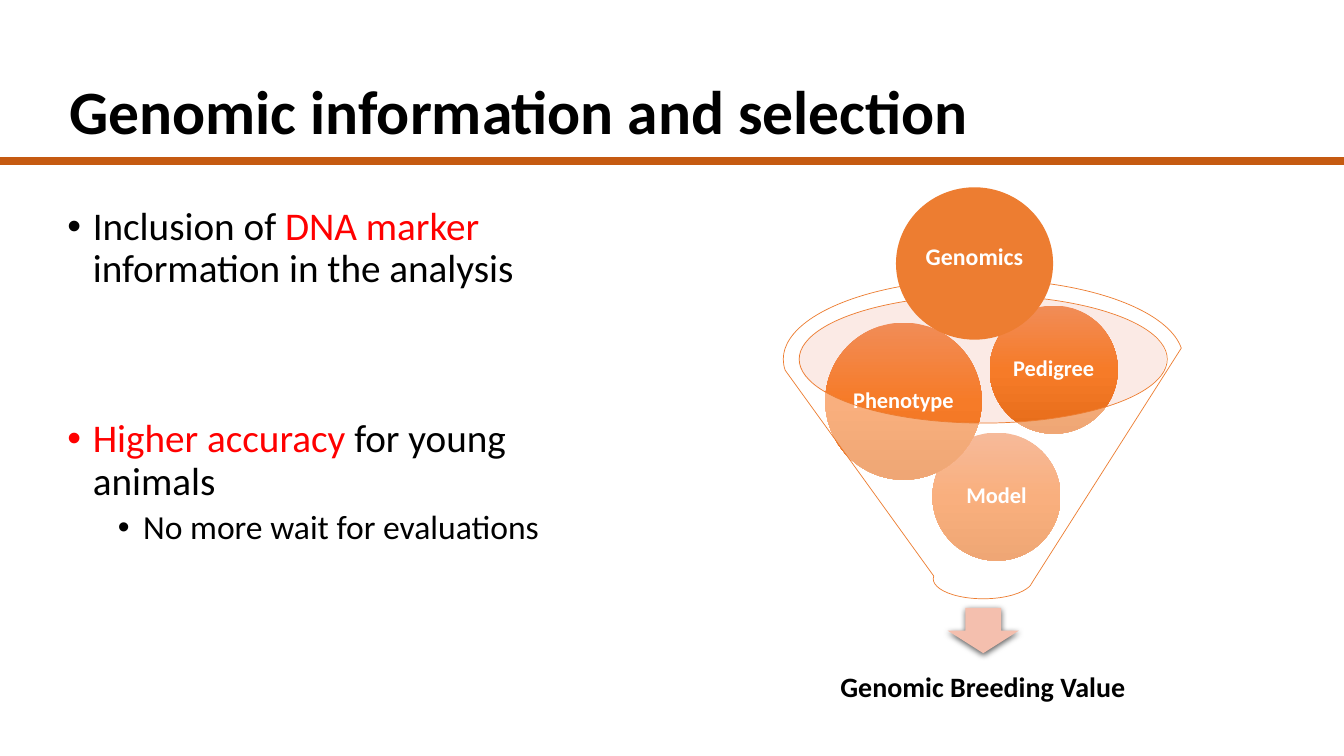
import copy

import pptx
import pptx.dml.color
import pptx.enum.shapes
import pptx.enum.text
import pptx.oxml.ns
import pptx.oxml.xmlchemy
import pptx.util
from lxml import etree
from pptx.util import Cm

SHAPE = pptx.enum.shapes.MSO_SHAPE
ALIGN = pptx.enum.text.PP_ALIGN
ANCHOR = pptx.enum.text.MSO_ANCHOR
qn = pptx.oxml.ns.qn

ORANGE = "ED7D31"
RED = "FF0000"
BALL_GRADIENT = ((0, "F18C57"), (0.5, "F67B28"), (1, "E56C19"))
BALLS = (
    ("Model", 23.5, 10.9, 3.23, 3.23),
    ("Phenotype", 20.8, 8.13, 3.94, 3.96),
    ("Pedigree", 24.94, 7.7, 3.23, 3.23),
)


def rgb(value):
    return pptx.dml.color.RGBColor.from_string(value)


def add_run(p, text, size=28, color="000000", bold=False):
    r = p.add_run()
    r.text = text
    r.font.name = "Calibri"
    r.font.size = pptx.util.Pt(size)
    r.font.bold = bold
    r.font.color.rgb = rgb(color)


def set_frame(tf, inset=(0.25, 0.13, 0.25, 0.13), anchor=ANCHOR.MIDDLE):
    """Fix the insets (left, top, right, bottom, in cm), anchor and wrapping."""
    tf.word_wrap = True
    tf.auto_size = pptx.enum.text.MSO_AUTO_SIZE.NONE
    tf.vertical_anchor = anchor
    tf.margin_left, tf.margin_top, tf.margin_right, tf.margin_bottom = map(Cm, inset)


def add_line_of_text(tf, text, align=ALIGN.CENTER, **font):
    p = tf.paragraphs[0]
    p.alignment = align
    p.line_spacing = 0.9
    add_run(p, text, **font)


def add_bullet(p, runs, left, before, size=28):
    """Bulleted paragraph; runs are (text, colour) pairs, left is in cm."""
    p.line_spacing = 0.9
    p.space_before = pptx.util.Pt(before)
    pPr = p._p.get_or_add_pPr()
    pPr.set("marL", str(Cm(left)))
    pPr.set("indent", str(-Cm(0.64)))
    etree.SubElement(pPr, qn("a:buFont")).set("typeface", "Arial")
    etree.SubElement(pPr, qn("a:buChar")).set("char", "•")
    for text, color in runs:
        add_run(p, text, size=size, color=color)


def set_alpha(color_parent, percent):
    color = next(color_parent.iter(qn("a:srgbClr")))
    etree.SubElement(color, qn("a:alpha")).set("val", str(percent * 1000))


def add_shape(s, kind, box, fill=None, alpha=None, line=None):
    sp = s.shapes.add_shape(kind, *map(Cm, box))
    sp.shadow.inherit = False
    if fill:
        sp.fill.solid()
        sp.fill.fore_color.rgb = rgb(fill)
        if alpha:
            set_alpha(sp._element.spPr, alpha)
    if line:
        sp.line.color.rgb = rgb(line)
        sp.line.width = pptx.util.Pt(0.5)
    else:
        sp.line.fill.background()
    return sp


def add_ball(s, text, *box):
    sp = add_shape(s, SHAPE.OVAL, box)
    sp.fill.gradient()
    stop_list = next(sp._element.spPr.iter(qn("a:gsLst")))
    stop_list.append(copy.deepcopy(stop_list[0]))
    for stop, (position, color) in zip(sp.fill.gradient_stops, BALL_GRADIENT):
        stop.position = position
        stop.color.rgb = rgb(color)
    sp.fill.gradient_angle = 270
    set_frame(sp.text_frame, inset=(0.05,) * 4)
    add_line_of_text(sp.text_frame, text, size=16, color="FFFFFF", bold=True)


def add_drop_shadow(sp, blur, distance, alpha):
    effects = sp._element.spPr.find(qn("a:effectLst"))
    shadow = etree.SubElement(effects, qn("a:outerShdw"))
    shadow.set("blurRad", str(pptx.util.Pt(blur)))
    shadow.set("dist", str(pptx.util.Pt(distance)))
    shadow.set("dir", "5400000")
    shadow.set("rotWithShape", "0")
    etree.SubElement(shadow, qn("a:srgbClr")).set("val", "000000")
    set_alpha(shadow, alpha)


def add_title(s, text):
    title = s.shapes.title
    title.left, title.top, title.width, title.height = map(Cm, (1.5, 1.04, 29.21, 3.68))
    set_frame(title.text_frame)
    add_line_of_text(title.text_frame, text, align=ALIGN.LEFT, size=44, bold=True)


def add_rule(s, y, width):
    line = s.shapes.add_connector(
        pptx.enum.shapes.MSO_CONNECTOR.STRAIGHT, 0, Cm(y), width, Cm(y))
    line.line.color.rgb = rgb("C55A11")
    line.line.width = pptx.util.Pt(6)
    etree.SubElement(line._element.spPr, qn("a:effectLst"))


def add_points(s):
    tf = s.shapes.add_textbox(*map(Cm, (1.45, 5.08, 14.4, 12.09))).text_frame
    set_frame(tf, anchor=ANCHOR.TOP)
    add_bullet(tf.paragraphs[0], (
        ("Inclusion of ", "000000"),
        ("DNA marker ", RED),
        ("information in the analysis", "000000"),
    ), left=0.64, before=10)
    add_bullet(tf.add_paragraph(), (
        ("Higher accuracy ", RED),
        ("for young animals", "000000"),
    ), left=0.64, before=91)
    add_bullet(tf.add_paragraph(), (("No more wait for evaluations", "000000"),),
               left=1.91, before=5, size=24)


def add_funnel(s):
    add_shape(s, SHAPE.OVAL, (20.12, 7.44, 9.27, 3.23), fill="F6CCBE", alpha=40)
    arrow = add_shape(s, SHAPE.DOWN_ARROW, (23.88, 15.32, 1.8, 1.14), fill="F4BFAE")
    add_drop_shadow(arrow, blur=4.5, distance=1.5, alpha=63)

    result = s.shapes.add_textbox(*map(Cm, (20.45, 16.26, 8.64, 2.16)))
    set_frame(result.text_frame, inset=(0.4,) * 4)
    add_line_of_text(result.text_frame, "Genomic Breeding Value", size=20, bold=True)

    for ball in BALLS:
        add_ball(s, *ball)
    add_shape(s, SHAPE.FUNNEL, (19.74, 7.04, 10.08, 8.05),
              fill="FFFFFF", alpha=40, line=ORANGE)

    genomics = add_shape(s, SHAPE.OVAL, (22.58, 4.72, 3.96, 3.84), fill=ORANGE)
    set_frame(genomics.text_frame, inset=(0, 0, 0, 0.28))
    add_line_of_text(genomics.text_frame, "Genomics", size=17, color="FFFFFF", bold=True)


def main():
    prs = pptx.Presentation()
    prs.slide_width, prs.slide_height = Cm(33.87), Cm(19.05)
    s = prs.slides.add_slide(prs.slide_layouts.get_by_name("Title Only"))
    add_title(s, "Genomic information and selection")
    add_points(s)
    add_funnel(s)
    add_rule(s, 4.06, prs.slide_width)
    prs.save("out.pptx")


if __name__ == "__main__":
    main()
